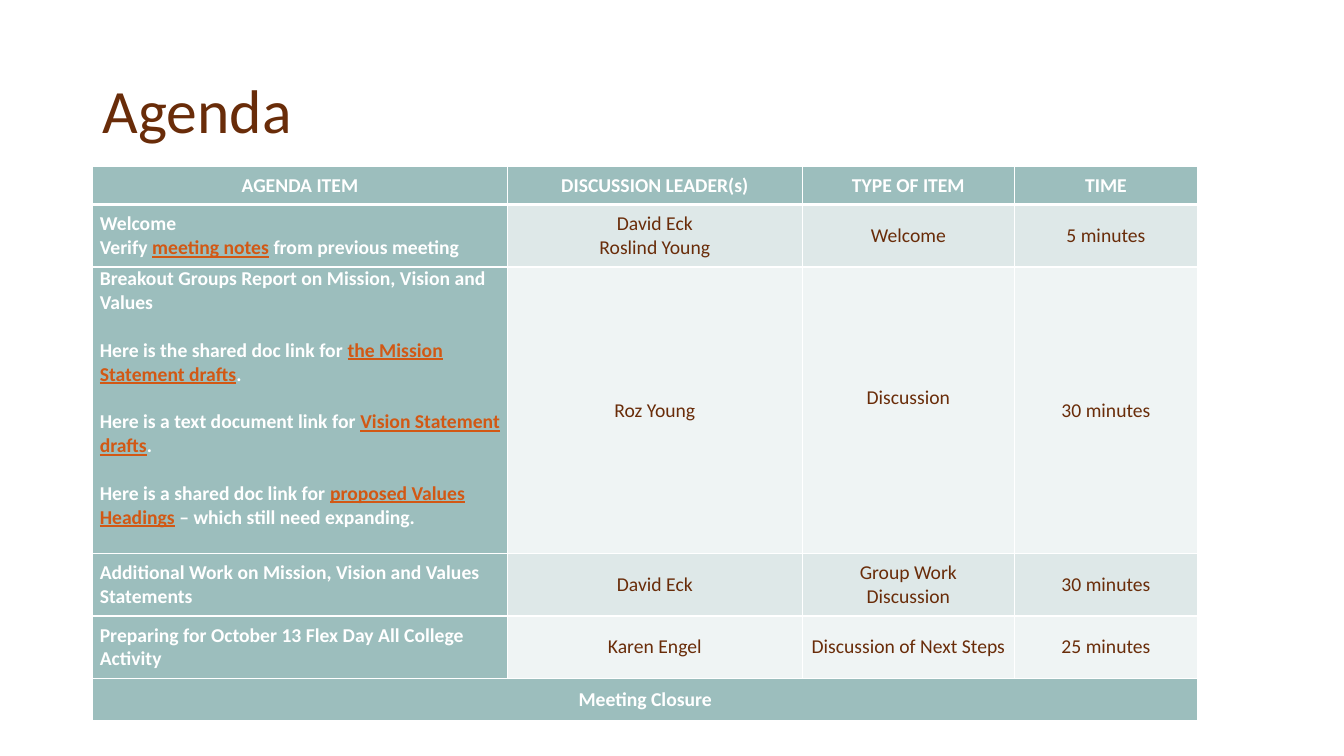
import pptx
import pptx.dml.color
import pptx.enum.text
import pptx.oxml
import pptx.oxml.ns
import pptx.util
from dataclasses import dataclass

Inches = pptx.util.Inches
Pt = pptx.util.Pt
ALIGN = pptx.enum.text.PP_ALIGN
MIDDLE = pptx.enum.text.MSO_ANCHOR.MIDDLE


@dataclass(frozen=True)
class Theme:
    font: str = "Calibri"
    brown: str = "692C09"
    white: str = "FFFFFF"
    link: str = "D25814"
    teal: str = "9CBEBD"
    bands: tuple = ("DEE8E8", "EFF4F4")
    title_size: int = 44
    body_size: int = 14


theme = Theme()


def write(frame, text, size=theme.body_size, color=theme.brown, bold=False,
          align=ALIGN.CENTER, gap=0, spacing=None):
    frame.word_wrap = True
    for number, line in enumerate(text.split("\n")):
        paragraph = frame.add_paragraph() if number else frame.paragraphs[0]
        paragraph.alignment = align
        paragraph.line_spacing = spacing
        paragraph.space_before = Pt(gap if number else 0)
        for position, part in enumerate(line.split("|")):
            linked = position % 2 == 1
            run = paragraph.add_run()
            run.text = part
            run.font.name = theme.font
            run.font.size = Pt(size)
            run.font.bold = bold
            run.font.underline = linked
            run.font.color.rgb = pptx.dml.color.RGBColor.from_string(
                theme.link if linked else color)


def format_cell(cell, fill, top, bottom):
    cell.vertical_anchor = MIDDLE
    cell.margin_left = cell.margin_right = Inches(0.07)
    cell.margin_top = cell.margin_bottom = 0
    properties = cell._tc.get_or_add_tcPr()
    for side, width in (("L", 1), ("R", 1), ("T", top), ("B", bottom)):
        properties.append(pptx.oxml.parse_xml(
            f'<a:ln{side} {pptx.oxml.ns.nsdecls("a")} w="{Pt(width)}"><a:solidFill>'
            f'<a:srgbClr val="{theme.white}"/></a:solidFill></a:ln{side}>'))
    cell.fill.solid()
    cell.fill.fore_color.rgb = pptx.dml.color.RGBColor.from_string(fill)


deck = pptx.Presentation()
deck.slide_width = Inches(13.33)
deck.slide_height = Inches(7.5)
slide = deck.slides.add_slide(deck.slide_layouts[5])

heading = slide.shapes.title
heading.left, heading.top = Inches(0.92), Inches(0.4)
heading.width, heading.height = Inches(11.5), Inches(1.45)
heading.text_frame.vertical_anchor = MIDDLE
write(heading.text_frame, "Agenda", size=theme.title_size, align=ALIGN.LEFT, spacing=0.9)

breakout_reports = "\n".join([
    "Breakout Groups Report on Mission, Vision and Values",
    "Here is the shared doc link for |the Mission Statement drafts|.",
    "Here is a text document link for |Vision Statement drafts|.",
    "Here is a shared doc link for |proposed Values Headings| – which still need expanding.",
])
agenda_rows = [
    ("AGENDA ITEM", "DISCUSSION LEADER(s)", "TYPE OF ITEM", "TIME"),
    ("Welcome\nVerify |meeting notes| from previous meeting",
     "David Eck\nRoslind Young", "Welcome", "5 minutes"),
    (breakout_reports, "Roz Young", "Discussion", "30 minutes"),
    ("Additional Work on Mission, Vision and Values Statements",
     "David Eck", "Group Work\nDiscussion", "30 minutes"),
    ("Preparing for October 13 Flex Day All College Activity",
     "Karen Engel", "Discussion of Next Steps", "25 minutes"),
    ("Meeting Closure",),
]
column_widths = [4.11, 2.93, 2.1, 1.82]
row_heights = [0.38, 0.62, 2.8, 0.62, 0.62, 0.42]
breakout_row = 2
closing_row = len(agenda_rows) - 1

agenda = slide.shapes.add_table(
    len(row_heights), len(column_widths), Inches(0.92), Inches(1.65),
    Inches(sum(column_widths)), Inches(sum(row_heights))).table
for column, width in zip(agenda.columns, column_widths):
    column.width = Inches(width)
for row, height in zip(agenda.rows, row_heights):
    row.height = Inches(height)
agenda.cell(closing_row, 0).merge(agenda.cell(closing_row, len(column_widths) - 1))

for r, entries in enumerate(agenda_rows):
    banner = r in (0, closing_row)
    for c in range(len(column_widths)):
        cell = agenda.cell(r, c)
        strong = banner or c == 0
        format_cell(cell, theme.teal if strong else theme.bands[(r - 1) % 2],
                    top=3 if r == 1 else 1, bottom=3 if r == 0 else 1)
        if c < len(entries):
            write(cell.text_frame, entries[c], bold=strong,
                  color=theme.white if strong else theme.brown,
                  align=ALIGN.LEFT if c == 0 and not banner else ALIGN.CENTER,
                  gap=17 if r == breakout_row else 0)

for c in (0, 2):
    agenda.cell(breakout_row, c).margin_bottom = Inches(0.24)

deck.save("out.pptx")
